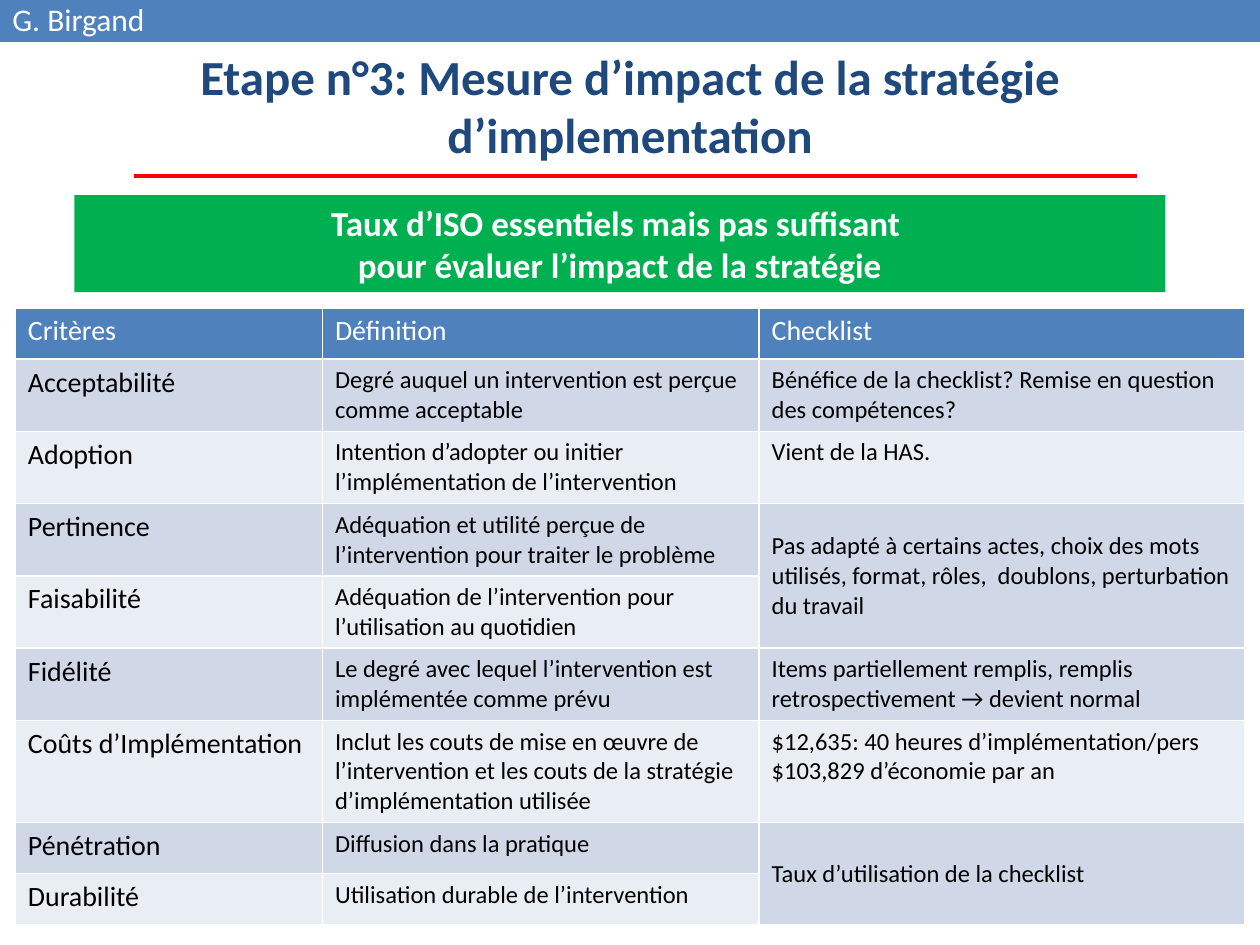
from lxml.etree import SubElement
from pptx import Presentation
from pptx.dml.color import RGBColor
from pptx.enum.shapes import MSO_CONNECTOR as Connector, MSO_SHAPE as Shape
from pptx.enum.text import MSO_ANCHOR as Anchor, PP_ALIGN as Align
from pptx.oxml.ns import qn
from pptx.util import Pt

WHITE = RGBColor(0xFF, 0xFF, 0xFF)
BLACK = RGBColor(0x00, 0x00, 0x00)
NAVY = RGBColor(0x1F, 0x49, 0x7D)
BLUE = RGBColor(0x4F, 0x81, 0xBD)
RED = RGBColor(0xFF, 0x00, 0x00)
GREEN = RGBColor(0x00, 0xB0, 0x50)
BANDS = RGBColor(0xD0, 0xD8, 0xE8), RGBColor(0xE9, 0xED, 0xF4)

COLUMN_WIDTHS = 175.5, 249.5, 277.5
ROW_HEIGHT = 29.2
CRITERIA = [
    ("Critères", "Définition", "Checklist"),
    ("Acceptabilité", "Degré auquel un intervention est perçue comme acceptable",
     "Bénéfice de la checklist? Remise en question des compétences?"),
    ("Adoption", "Intention d’adopter ou initier l’implémentation de l’intervention",
     "Vient de la HAS."),
    ("Pertinence", "Adéquation et utilité perçue de l’intervention pour traiter le problème",
     "Pas adapté à certains actes, choix des mots utilisés, format, rôles,  doublons, "
     "perturbation du travail"),
    ("Faisabilité", "Adéquation de l’intervention pour l’utilisation au quotidien", None),
    ("Fidélité", "Le degré avec lequel l’intervention est implémentée comme prévu",
     "Items partiellement remplis, remplis retrospectivement → devient normal"),
    ("Coûts d’Implémentation",
     "Inclut les couts de mise en œuvre de l’intervention et les couts de la stratégie "
     "d’implémentation utilisée",
     "$12,635: 40 heures d’implémentation/pers\n$103,829 d’économie par an"),
    ("Pénétration", "Diffusion dans la pratique", "Taux d’utilisation de la checklist"),
    ("Durabilité", "Utilisation durable de l’intervention", None),
]


def write(frame, text, size, color, bold=False, align=Align.LEFT):
    """Fill a text frame, one paragraph per line of text."""
    frame.text = text
    for para in frame.paragraphs:
        para.alignment = align
        font = para.font
        font.name, font.size, font.bold = "Calibri", Pt(size), bold
        font.color.rgb = color


def place_title(page, text, left, top, width, height):
    """Move and format the title placeholder."""
    title = page.shapes.title
    title.left, title.top, title.width, title.height = map(Pt, (left, top, width, height))
    title.text_frame.vertical_anchor = Anchor.MIDDLE
    write(title.text_frame, text, 28, NAVY, True, Align.CENTER)


def add_banner(page, text, left, top, width, height, fill, size, **style):
    """Add a filled rectangle with white text."""
    box = page.shapes.add_shape(Shape.RECTANGLE, *map(Pt, (left, top, width, height)))
    box.shadow.inherit = False
    box.fill.solid()
    box.fill.fore_color.rgb = fill
    box.line.fill.background()
    box.text_frame.word_wrap = True
    box.text_frame.vertical_anchor = Anchor.MIDDLE
    write(box.text_frame, text, size, WHITE, **style)


def add_rule(page, left, right, y):
    """Add the red horizontal line under the title."""
    rule = page.shapes.add_connector(Connector.STRAIGHT, Pt(left), Pt(y), Pt(right), Pt(y))
    rule.line.color.rgb = RED
    rule.line.width = Pt(2.25)
    SubElement(rule._element.spPr, qn("a:effectLst"))


def add_criteria_table(page, left, top):
    """Add the table of criteria, merging a cell with the empty one below it."""
    size = len(CRITERIA), len(COLUMN_WIDTHS)
    table = page.shapes.add_table(*size, Pt(left), Pt(top), Pt(sum(COLUMN_WIDTHS)),
                                  Pt(ROW_HEIGHT * len(CRITERIA))).table
    for column, width in zip(table.columns, COLUMN_WIDTHS):
        column.width = Pt(width)
    for r, texts in enumerate(CRITERIA):
        table.rows[r].height = Pt(ROW_HEIGHT)
        for c, text in enumerate(texts):
            cell = table.cell(r, c)
            cell.fill.solid()
            cell.fill.fore_color.rgb = BANDS[(r - 1) % 2] if r else BLUE
            if text is None:
                origin = table.cell(r - 1, c)
                origin.merge(cell)
                origin.vertical_anchor = Anchor.MIDDLE
            else:
                write(cell.text_frame, text, 14 if r and c else 16, BLACK if r else WHITE)


def main():
    """Build the slide and save it."""
    deck = Presentation()
    deck.slide_width, deck.slide_height = Pt(720), Pt(540)
    page = deck.slides.add_slide(deck.slide_layouts[5])
    place_title(page, "Etape n°3: Mesure d’impact de la stratégie d’implementation",
                36, 15, 648, 90)
    add_banner(page, "G. Birgand", 0, -2, 720, 26, BLUE, 18)
    add_rule(page, 76.5, 649.5, 100.5)
    add_criteria_table(page, 8.8, 176)
    add_banner(page, "Taux d’ISO essentiels mais pas suffisant \n"
               "pour évaluer l’impact de la stratégie",
               42.5, 111.5, 623.5, 55.5, GREEN, 20, bold=True, align=Align.CENTER)
    deck.save("out.pptx")


if __name__ == "__main__":
    main()
